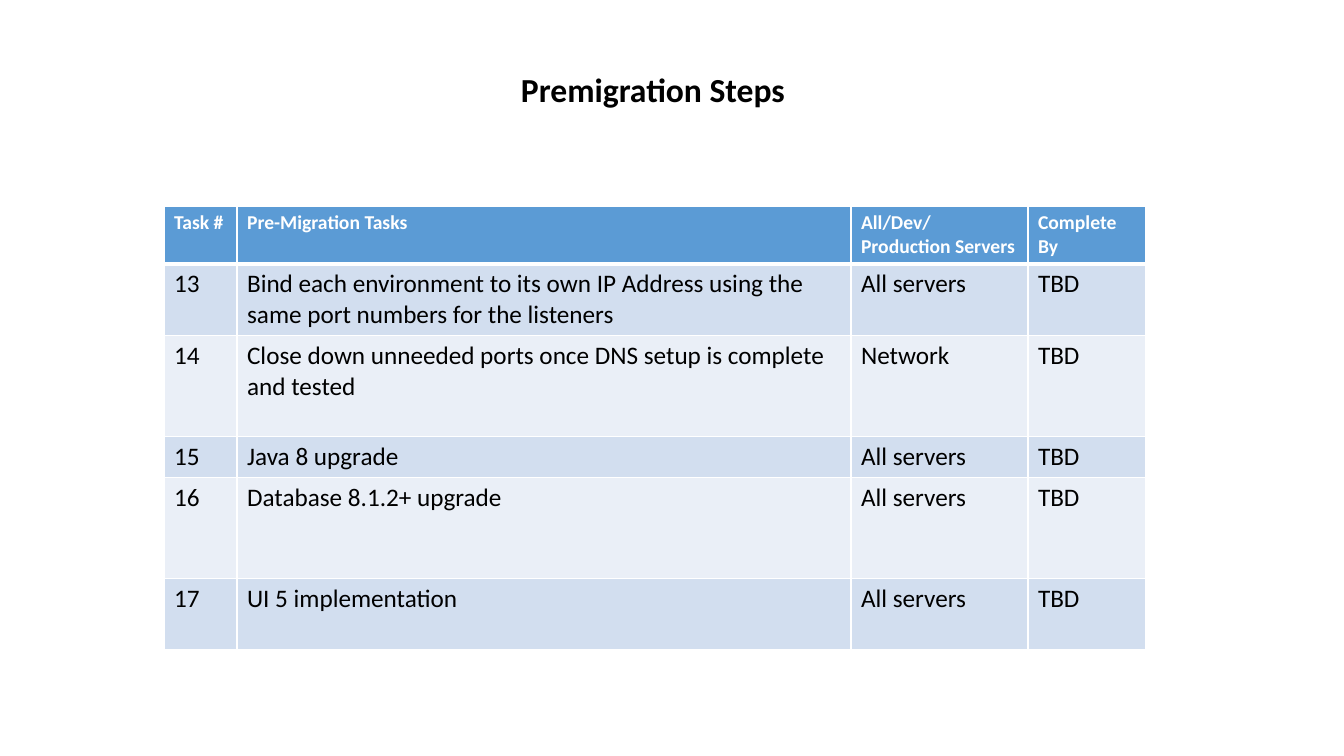
import lxml.etree
import pptx
import pptx.dml.color
import pptx.enum.text
import pptx.oxml.ns
import pptx.util

RGBColor = pptx.dml.color.RGBColor
WHITE = RGBColor(0xFF, 0xFF, 0xFF)
BLACK = RGBColor(0x00, 0x00, 0x00)
HEADER_BLUE = RGBColor(0x5B, 0x9B, 0xD5)
BAND_DARK = RGBColor(0xD2, 0xDE, 0xEF)
BAND_LIGHT = RGBColor(0xEA, 0xEF, 0xF7)

TITLE = "Premigration Steps"
ROWS = [
    ("Task #", "Pre-Migration Tasks", "All/Dev/ Production Servers", "Complete\nBy"),
    ("13", "Bind each environment to its own IP Address using the same port numbers "
     "for the listeners", "All servers", "TBD"),
    ("14", "Close down unneeded ports once DNS setup is complete and tested",
     "Network", "TBD"),
    ("15", "Java 8 upgrade", "All servers", "TBD"),
    ("16", "Database 8.1.2+ upgrade", "All servers", "TBD"),
    ("17", "UI 5 implementation", "All servers", "TBD"),
]

SLIDE_SIZE = (1344, 756)
TITLE_BOX = (331, 64, 644, 50)
TABLE_CORNER = (164, 206)
COLUMN_WIDTHS = (73, 614, 177, 118)
ROW_HEIGHTS = (57, 70, 101, 41, 101, 71)

TITLE_FONT = {"name": "Calibri", "size": pptx.util.Pt(24), "bold": True}
HEADER_FONT = {"name": "Calibri", "size": pptx.util.Pt(14), "bold": True}
BODY_FONT = {"name": "Calibri", "size": pptx.util.Pt(18), "bold": False}


def px(length):
    return round(length * 914400 / 100.8)


def format_text(frame, font_format, color):
    for para in frame.paragraphs:
        for span in para.runs:
            for name, value in font_format.items():
                setattr(span.font, name, value)
            span.font.color.rgb = color


def add_borders(cell, bottom_points):
    """Give the cell white borders; call before its fill is set."""
    properties = cell._tc.get_or_add_tcPr()
    for side, points in (("L", 1), ("R", 1), ("T", 1), ("B", bottom_points)):
        line = lxml.etree.SubElement(properties, pptx.oxml.ns.qn("a:ln" + side),
                                     w=str(pptx.util.Pt(points)))
        fill = lxml.etree.SubElement(line, pptx.oxml.ns.qn("a:solidFill"))
        lxml.etree.SubElement(fill, pptx.oxml.ns.qn("a:srgbClr"), val=str(WHITE))


def add_title(slide):
    title = slide.shapes.title
    title.left, title.top, title.width, title.height = map(px, TITLE_BOX)
    frame = title.text_frame
    frame.text = TITLE
    frame.word_wrap = True
    frame.auto_size = pptx.enum.text.MSO_AUTO_SIZE.NONE
    frame.vertical_anchor = pptx.enum.text.MSO_ANCHOR.TOP
    frame.paragraphs[0].alignment = pptx.enum.text.PP_ALIGN.CENTER
    format_text(frame, TITLE_FONT, BLACK)


def add_task_table(slide):
    table = slide.shapes.add_table(
        len(ROWS), len(COLUMN_WIDTHS), *map(px, TABLE_CORNER),
        px(sum(COLUMN_WIDTHS)), px(sum(ROW_HEIGHTS))).table
    for column, width in zip(table.columns, COLUMN_WIDTHS):
        column.width = px(width)
    for row_index, (row, height) in enumerate(zip(table.rows, ROW_HEIGHTS)):
        row.height = px(height)
        is_header = row_index == 0
        band = BAND_DARK if row_index % 2 else BAND_LIGHT
        for cell, text in zip(row.cells, ROWS[row_index]):
            cell.text = text
            add_borders(cell, 3 if is_header else 1)
            cell.fill.solid()
            cell.fill.fore_color.rgb = HEADER_BLUE if is_header else band
            format_text(cell.text_frame, HEADER_FONT if is_header else BODY_FONT,
                        WHITE if is_header else BLACK)


def main():
    deck = pptx.Presentation()
    deck.slide_width, deck.slide_height = map(px, SLIDE_SIZE)
    slide = deck.slides.add_slide(deck.slide_layouts.get_by_name("Title Only"))
    add_task_table(slide)
    add_title(slide)
    deck.save("out.pptx")


if __name__ == "__main__":
    main()
